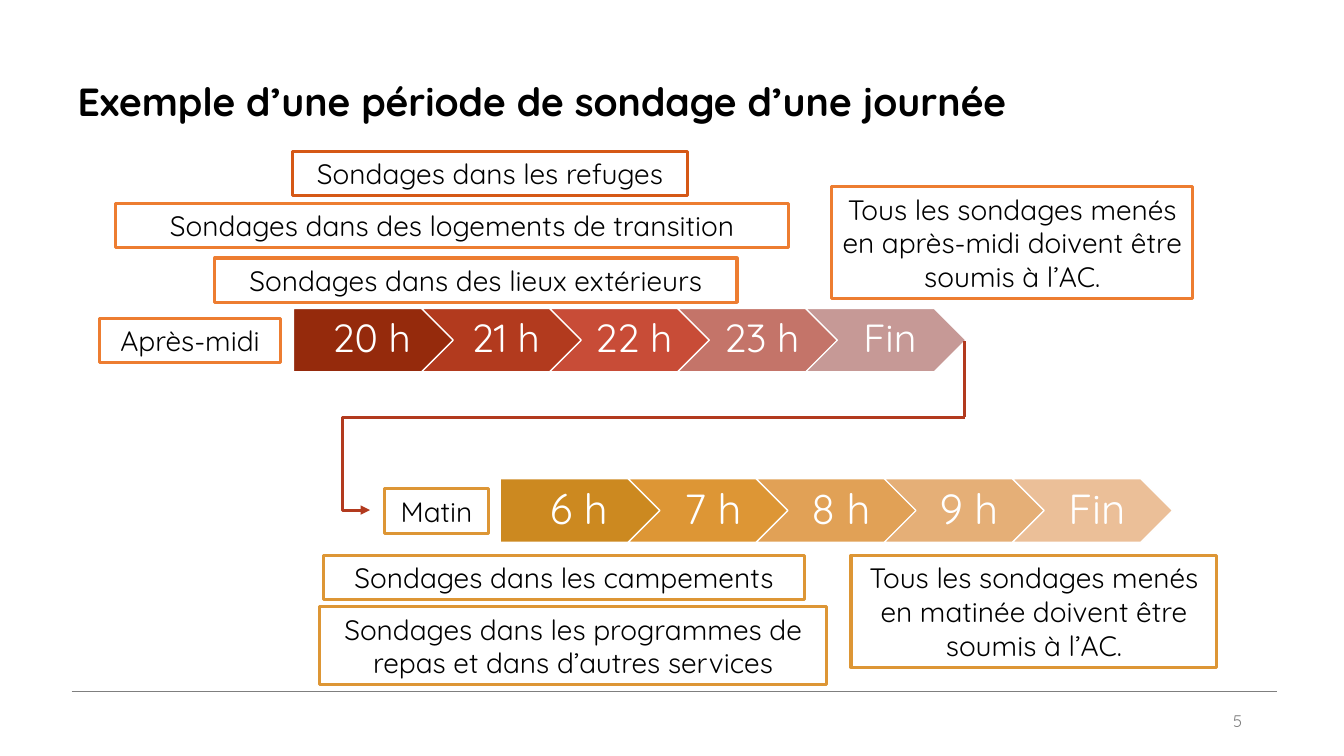
from lxml import etree
from pptx import Presentation
from pptx.dml.color import RGBColor
from pptx.enum import shapes, text
from pptx.oxml import ns
from pptx.util import Inches, Pt

FONT = "Quicksand"
TITLE = "Exemple d’une période de sondage d’une journée"
PAGE_NUMBER = "5"
ORANGE, GOLD, RUST = "ED7D31", "DD9635", "B23A1E"

TIMELINES = [
    {"left": 2.91, "top": 3.06, "size": 28, "insets": (0.16, 0.12),
     "steps": [("20 h", "952A0C"), ("21 h", RUST), ("22 h", "C84C37"),
               ("23 h", "C47469"), ("Fin", "C69996")]},
    {"left": 4.96, "top": 4.75, "size": 30, "insets": (0.17, 0.13),
     "steps": [("6 h", "CC8920"), ("7 h", GOLD), ("8 h", "E1A156"),
               ("9 h", "E5AF77"), ("Fin", "EBBF98")]},
]
STEP_WIDTH, STEP_HEIGHT, STEP_PITCH = 1.59, 0.63, 1.27

LABELS = [
    ("Sondages dans des lieux extérieurs", 2.13, 2.56, 5.18, 1, ORANGE),
    ("Tous les sondages menés en après-midi doivent être soumis à l’AC.", 8.25, 1.85, 3.58, 3, ORANGE),
    ("Sondages dans les programmes de repas et dans d’autres services", 3.17, 6.02, 5.03, 2, GOLD),
    ("Tous les sondages menés en matinée doivent être soumis à l’AC.", 8.44, 5.51, 3.63, 3, GOLD),
    ("Sondages dans les refuges", 2.9, 1.5, 3.92, 1, "D55816"),
    ("Sondages dans des logements de transition", 1.15, 2.02, 6.67, 1, ORANGE),
    ("Sondages dans les campements", 3.21, 5.51, 4.77, 1, GOLD),
    ("Après-midi", 0.99, 3.16, 1.79, 1, ORANGE),
    ("Matin", 3.81, 4.85, 1.04, 1, GOLD),
]
LABEL_HEIGHTS = {1: 0.44, 2: 0.77, 3: 1.11}


def color(value):
    return RGBColor.from_string(value)


def write(shape, words, size, ink, align, anchor=text.MSO_ANCHOR.MIDDLE, bold=False, spacing=1.0):
    frame = shape.text_frame
    frame.text = words
    frame.word_wrap = True
    frame.auto_size = text.MSO_AUTO_SIZE.NONE
    frame.vertical_anchor = anchor
    para = frame.paragraphs[0]
    para.alignment = align
    para.line_spacing = spacing
    font = para.runs[0].font
    font.name, font.size, font.bold = FONT, Pt(size), bold
    font.color.rgb = color(ink)


def add_block(page, kind, place, fill, line, weight):
    block = page.shapes.add_shape(kind, *map(Inches, place))
    block.shadow.inherit = False
    block.fill.solid()
    block.fill.fore_color.rgb = color(fill)
    block.line.color.rgb = color(line)
    block.line.width = Pt(weight)
    return block


def add_line(page, kind, start, end, line, weight):
    connector = page.shapes.add_connector(kind, *map(Inches, start + end))
    connector.line.color.rgb = color(line)
    connector.line.width = Pt(weight)
    etree.SubElement(connector._element.spPr, ns.qn("a:effectLst"))
    return connector


def add_timeline(page, timeline):
    for index, (words, fill) in enumerate(timeline["steps"]):
        kind = shapes.MSO_SHAPE.CHEVRON if index else shapes.MSO_SHAPE.PENTAGON
        place = (timeline["left"] + index * STEP_PITCH, timeline["top"], STEP_WIDTH, STEP_HEIGHT)
        step = add_block(page, kind, place, fill, "FFFFFF", 1)
        write(step, words, timeline["size"], "FFFFFF", text.PP_ALIGN.CENTER, spacing=0.9)
        frame = step.text_frame
        frame.margin_left = Inches(timeline["insets"][min(index, 1)])
        frame.margin_right = Inches(0.04)
        frame.margin_top = frame.margin_bottom = Inches(0.08)


def add_return_arrow(page):
    corner = (9.57, 4.14)
    arrow = add_line(page, shapes.MSO_CONNECTOR.ELBOW, corner, (3.67, 5.06), RUST, 2.25)
    properties = arrow._element.spPr
    guides = properties.find(ns.qn("a:prstGeom")).get_or_add_avLst()
    etree.SubElement(guides, ns.qn("a:gd"), name="adj1", fmla="val 104600")
    etree.SubElement(properties.find(ns.qn("a:ln")), ns.qn("a:tailEnd"), type="triangle")
    add_line(page, shapes.MSO_CONNECTOR.STRAIGHT, corner, (9.57, 3.38), RUST, 2.25)


def main():
    deck = Presentation()
    deck.slide_width, deck.slide_height = Inches(13.33), Inches(7.5)
    page = deck.slides.add_slide(deck.slide_layouts[5])

    title = page.shapes.title
    title.left, title.top, title.width, title.height = map(Inches, (0.67, 0.77, 12, 1))
    write(title, TITLE, 28, "000000", text.PP_ALIGN.LEFT, text.MSO_ANCHOR.TOP, True, 0.9)

    add_line(page, shapes.MSO_CONNECTOR.STRAIGHT, (0.71, 6.86), (12.67, 6.86), "7F7F7F", 0.25)
    number = page.shapes.add_textbox(*map(Inches, (9.42, 6.95, 3, 0.4)))
    write(number, PAGE_NUMBER, 12, "7F7F7F", text.PP_ALIGN.RIGHT)

    for timeline in TIMELINES:
        add_timeline(page, timeline)
    for words, left, top, width, rows, line in LABELS:
        place = (left, top, width, LABEL_HEIGHTS[rows])
        label = add_block(page, shapes.MSO_SHAPE.RECTANGLE, place, "FFFFFF", line, 2.25)
        write(label, words, 20, "000000", text.PP_ALIGN.CENTER)
    add_return_arrow(page)

    deck.save("out.pptx")


if __name__ == "__main__":
    main()
